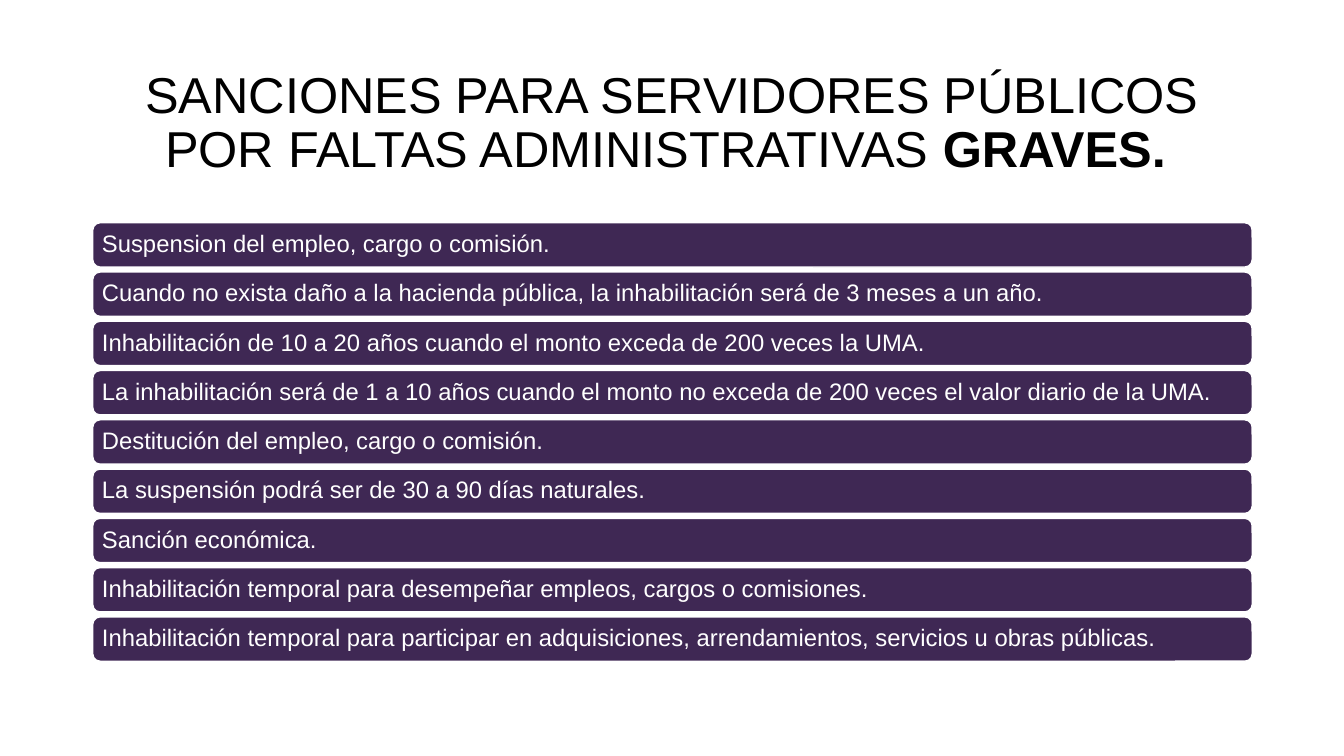
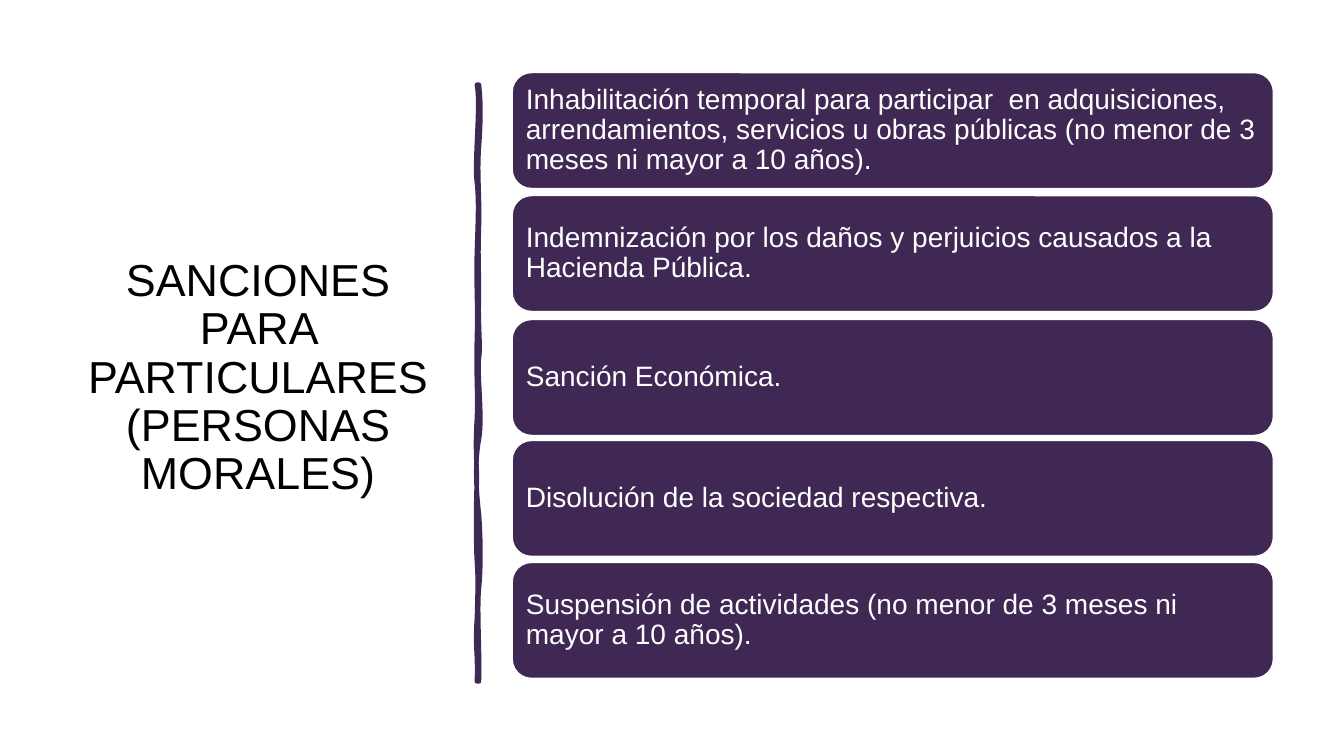
from lxml import etree
from pptx import Presentation
from pptx.dml.color import RGBColor
from pptx.enum.shapes import MSO_SHAPE
from pptx.enum.text import MSO_ANCHOR, PP_ALIGN
from pptx.oxml.ns import qn
from pptx.util import Inches, Pt

ROUNDED = MSO_SHAPE.ROUNDED_RECTANGLE
MIDDLE = MSO_ANCHOR.MIDDLE
CENTER, LEFT = PP_ALIGN.CENTER, PP_ALIGN.LEFT

FONT = "Arial"
COLORS = {
    name: RGBColor.from_string(value)
    for name, value in {"purple": "3F2854", "white": "FFFFFF", "black": "000000"}.items()
}


def write_text(shape, text, size, color, alignment):
    """Fill a shape with one vertically centred paragraph and return it."""
    frame = shape.text_frame
    frame.text = text
    frame.word_wrap = True
    frame.vertical_anchor = MIDDLE
    paragraph = frame.paragraphs[0]
    paragraph.alignment = alignment
    paragraph.line_spacing = 0.9
    font = paragraph.runs[0].font
    font.name, font.size, font.color.rgb = FONT, Pt(size), COLORS[color]
    return paragraph


def add_cards(slide, texts, tops, left, width, height, margin, size):
    """Stack one rounded card per text."""
    for text, top in zip(texts, tops):
        card = slide.shapes.add_shape(
            ROUNDED, Inches(left), Inches(top), Inches(width), Inches(height)
        )
        card.shadow.inherit = False
        card.fill.solid()
        card.fill.fore_color.rgb = COLORS["purple"]
        card.line.color.rgb = COLORS["white"]
        card.line.width = Pt(1)
        write_text(card, text, size, "white", LEFT)
        frame = card.text_frame
        frame.margin_left = frame.margin_right = Inches(margin)
        frame.margin_top = frame.margin_bottom = Inches(margin)


presentation = Presentation()
presentation.slide_width = Inches(13.33)
presentation.slide_height = Inches(7.5)
blank_layout = presentation.slide_layouts[6]

# Slide 1: sanctions for public servants
slide = presentation.slides.add_slide(blank_layout)
title = slide.shapes.add_textbox(Inches(0.92), Inches(0.61), Inches(11.5), Inches(1.24))
paragraph = write_text(
    title,
    "SANCIONES PARA SERVIDORES PÚBLICOS POR FALTAS ADMINISTRATIVAS ",
    36, "black", CENTER,
)
emphasis = paragraph.add_run()
emphasis.text = "GRAVES. "
emphasis.font.name, emphasis.font.size, emphasis.font.bold = FONT, Pt(36), True
emphasis.font.color.rgb = COLORS["black"]

public_servant_sanctions = [
    "Suspension del empleo, cargo o comisión.",
    "Cuando no exista daño a la hacienda pública, la inhabilitación será de 3 meses a un año.",
    "Inhabilitación de 10 a 20 años cuando el monto exceda de 200 veces la UMA.",
    "La inhabilitación será de 1 a 10 años cuando el monto no exceda de 200 veces el valor diario de la UMA.",
    "Destitución del empleo, cargo o comisión.",
    "La suspensión podrá ser de 30 a 90 días naturales.",
    "Sanción económica.",
    "Inhabilitación temporal para desempeñar empleos, cargos o comisiones.",
    "Inhabilitación temporal para participar en adquisiciones, arrendamientos, servicios u obras públicas.",
]
first_top, last_top = 2.21, 6.12
pitch = (last_top - first_top) / (len(public_servant_sanctions) - 1)
tops = [first_top + index * pitch for index in range(len(public_servant_sanctions))]
add_cards(slide, public_servant_sanctions, tops, left=0.92, width=11.5,
          height=0.44, margin=0.07, size=17)

# Slide 2: sanctions for legal entities
slide = presentation.slides.add_slide(blank_layout)
title = slide.shapes.add_textbox(Inches(0.69), Inches(0.7), Inches(3.74), Inches(6.11))
write_text(title, "SANCIONES PARA PARTICULARES (PERSONAS MORALES)", 32, "black", CENTER)

# Hand-drawn divider: each curve is two control points and an end point
divider_start = (4.75, 0.84)
divider_curves = [
    [(4.77, 1.02), (4.77, 1.19), (4.75, 1.46)],
    [(4.73, 1.73), (4.76, 1.95), (4.75, 2.26)],
    [(4.74, 2.57), (4.75, 2.62), (4.75, 2.94)],
    [(4.74, 3.25), (4.77, 3.42), (4.75, 3.56)],
    [(4.73, 3.7), (4.79, 4.14), (4.75, 4.36)],
    [(4.71, 4.57), (4.72, 4.84), (4.75, 5.1)],
    [(4.77, 5.36), (4.77, 5.64), (4.75, 5.84)],
    [(4.73, 6.03), (4.76, 6.5), (4.75, 6.76)],
    [(4.74, 6.76), (4.73, 6.76), (4.73, 6.76)],
    [(4.74, 6.46), (4.71, 6.44), (4.73, 6.13)],
    [(4.74, 5.83), (4.74, 5.7), (4.73, 5.57)],
    [(4.72, 5.44), (4.72, 4.95), (4.73, 4.77)],
    [(4.73, 4.59), (4.71, 4.45), (4.73, 4.15)],
    [(4.74, 3.86), (4.72, 3.73), (4.73, 3.35)],
    [(4.74, 2.98), (4.72, 2.81), (4.73, 2.5)],
    [(4.74, 2.18), (4.75, 2), (4.73, 1.81)],
    [(4.7, 1.63), (4.77, 1.04), (4.73, 0.84)],
]
builder = slide.shapes.build_freeform(*[Inches(value) for value in divider_start])
builder.add_line_segments(
    [(Inches(x), Inches(y)) for curve in divider_curves for x, y in curve], close=True
)
divider = builder.convert_to_shape()
# Join every three straight segments into one Bézier curve
segments = list(divider.element.iter(qn("a:lnTo")))
for index in range(0, len(segments), 3):
    curve = etree.Element(qn("a:cubicBezTo"))
    segments[index].addprevious(curve)
    for segment in segments[index:index + 3]:
        curve.append(segment[0])
        segment.getparent().remove(segment)
divider.shadow.inherit = False
divider.fill.solid()
divider.fill.fore_color.rgb = COLORS["purple"]
divider.line.color.rgb = COLORS["purple"]
divider.line.width = Pt(3.25)

legal_entity_sanctions = [
    "Inhabilitación temporal para participar  en adquisiciones, arrendamientos, servicios u obras públicas (no menor de 3 meses ni mayor a 10 años).",
    "Indemnización por los daños y perjuicios causados a la Hacienda Pública.",
    "Sanción Económica.",
    "Disolución de la sociedad respectiva.",
    "Suspensión de actividades (no menor de 3 meses ni mayor a 10 años).",
]
add_cards(slide, legal_entity_sanctions, [0.72, 1.94, 3.17, 4.37, 5.58], left=5.08,
          width=7.55, height=1.15, margin=0.08, size=20)

presentation.save("out.pptx")
